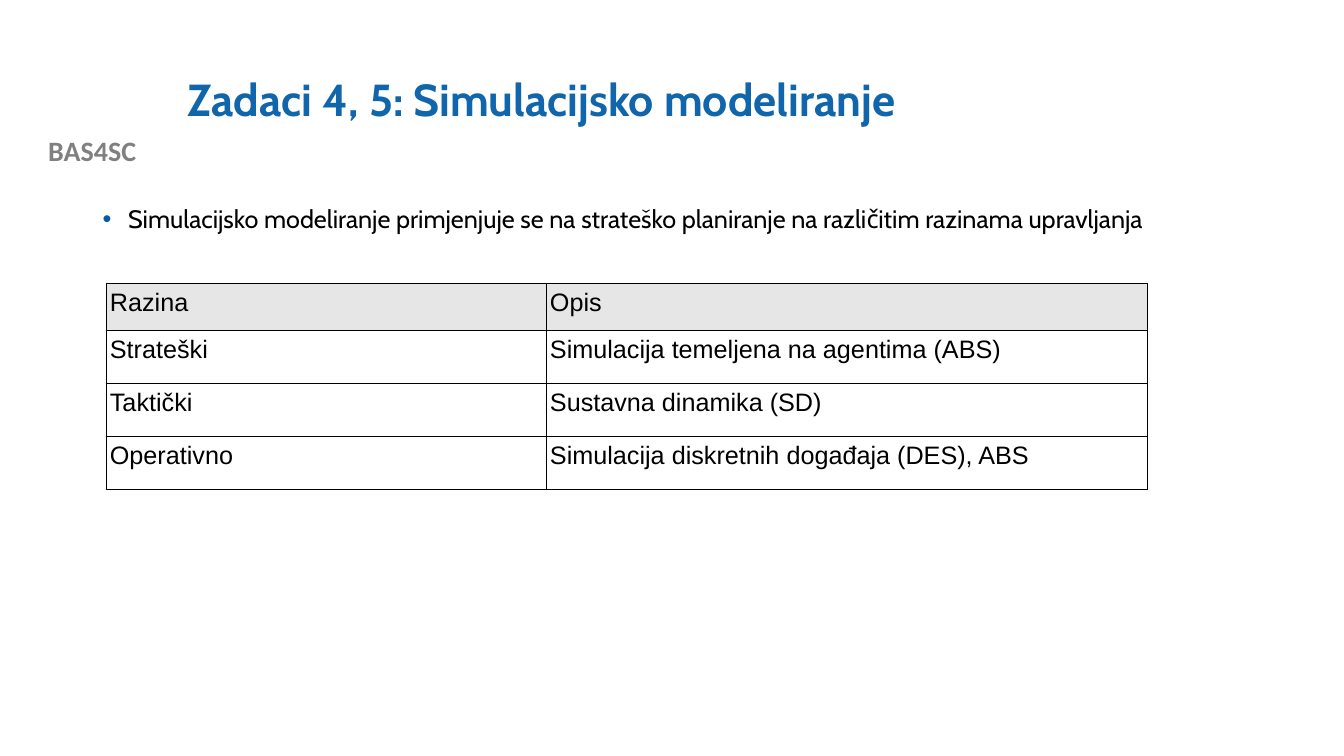
from lxml.etree import SubElement
from pptx import Presentation
from pptx.dml.color import RGBColor
from pptx.enum.text import MSO_ANCHOR, PP_ALIGN
from pptx.oxml.ns import qn
from pptx.util import Cm, Pt

TITLE = "Zadaci 4, 5: Simulacijsko modeliranje"
PROJECT = "BAS4SC"
BULLET = ("Simulacijsko modeliranje primjenjuje se na strateško planiranje "
          "na različitim razinama upravljanja")
LEVELS = [
    ("Razina", "Opis"),
    ("Strateški", "Simulacija temeljena na agentima (ABS)"),
    ("Taktički", "Sustavna dinamika (SD)"),
    ("Operativno", "Simulacija diskretnih događaja (DES), ABS"),
]
COLORS = {"title": "1065AB", "project": "808080", "bullet": "015BA6",
          "text": "000000", "border": "000000", "header": "E7E6E6"}
COL_WIDTHS = (11.09, 15.16)
HEADER_HEIGHT, ROW_HEIGHT = 1.18, 1.34
BORDER_PT = 0.57


def format_runs(p, font, size, color, bold=False):
    for r in p.runs:
        r.font.name = font
        r.font.size = Pt(size)
        r.font.bold = bold
        r.font.color.rgb = RGBColor.from_string(COLORS[color])


def add_text(slide, text, box, font, size, color, bold=False):
    """Add a wrapping text box and return its text frame."""
    tf = slide.shapes.add_textbox(*(Cm(v) for v in box)).text_frame
    tf.word_wrap = True
    tf.text = text
    format_runs(tf.paragraphs[0], font, size, color, bold)
    return tf


def add_bullet(p, char, color):
    pPr = p._p.get_or_add_pPr()
    pPr.set("marL", str(Cm(0.64)))
    pPr.set("indent", str(Cm(-0.64)))
    clr = SubElement(pPr, qn("a:buClr"))
    SubElement(clr, qn("a:srgbClr"), val=COLORS[color])
    SubElement(pPr, qn("a:buFont"), typeface="Arial")
    SubElement(pPr, qn("a:buChar"), char=char)


def add_borders(cell):
    tcPr = cell._tc.get_or_add_tcPr()
    for side in ("lnL", "lnR", "lnT", "lnB"):
        ln = SubElement(tcPr, qn(f"a:{side}"), w=str(Pt(BORDER_PT)))
        fill = SubElement(ln, qn("a:solidFill"))
        SubElement(fill, qn("a:srgbClr"), val=COLORS["border"])


def add_level_table(slide):
    heights = [HEADER_HEIGHT] + [ROW_HEIGHT] * (len(LEVELS) - 1)
    table = slide.shapes.add_table(
        len(LEVELS), len(COL_WIDTHS), Cm(2.67), Cm(7.14),
        Cm(sum(COL_WIDTHS)), Cm(sum(heights))).table
    for col, width in zip(table.columns, COL_WIDTHS):
        col.width = Cm(width)
    for i, (row, height, texts) in enumerate(zip(table.rows, heights, LEVELS)):
        row.height = Cm(height)
        for cell, text in zip(row.cells, texts):
            cell.text = text
            format_runs(cell.text_frame.paragraphs[0], "Arial", 18, "text")
            cell.margin_left = cell.margin_right = Cm(0.1)
            add_borders(cell)
            if i == 0:
                cell.fill.solid()
                cell.fill.fore_color.rgb = RGBColor.from_string(COLORS["header"])
            else:
                cell.fill.background()


def main():
    prs = Presentation()
    prs.slide_width, prs.slide_height = Cm(33.87), Cm(19.05)
    slide = prs.slides.add_slide(prs.slide_layouts[6])

    tf = add_text(slide, PROJECT, (0, 3.25, 4.65, 1.09), "Calibri", 20, "project", True)
    tf.paragraphs[0].alignment = PP_ALIGN.CENTER

    tf = add_text(slide, TITLE, (4.47, 1.02, 27.08, 3.1), "Cabin", 32, "title", True)
    tf.vertical_anchor = MSO_ANCHOR.MIDDLE
    tf.paragraphs[0].line_spacing = 0.9

    tf = add_text(slide, BULLET, (2.34, 5.08, 29.21, 12.09), "Cabin", 18, "text")
    p = tf.paragraphs[0]
    add_bullet(p, "•", "bullet")
    p.line_spacing = 0.9

    add_level_table(slide)
    prs.save("out.pptx")


if __name__ == "__main__":
    main()
